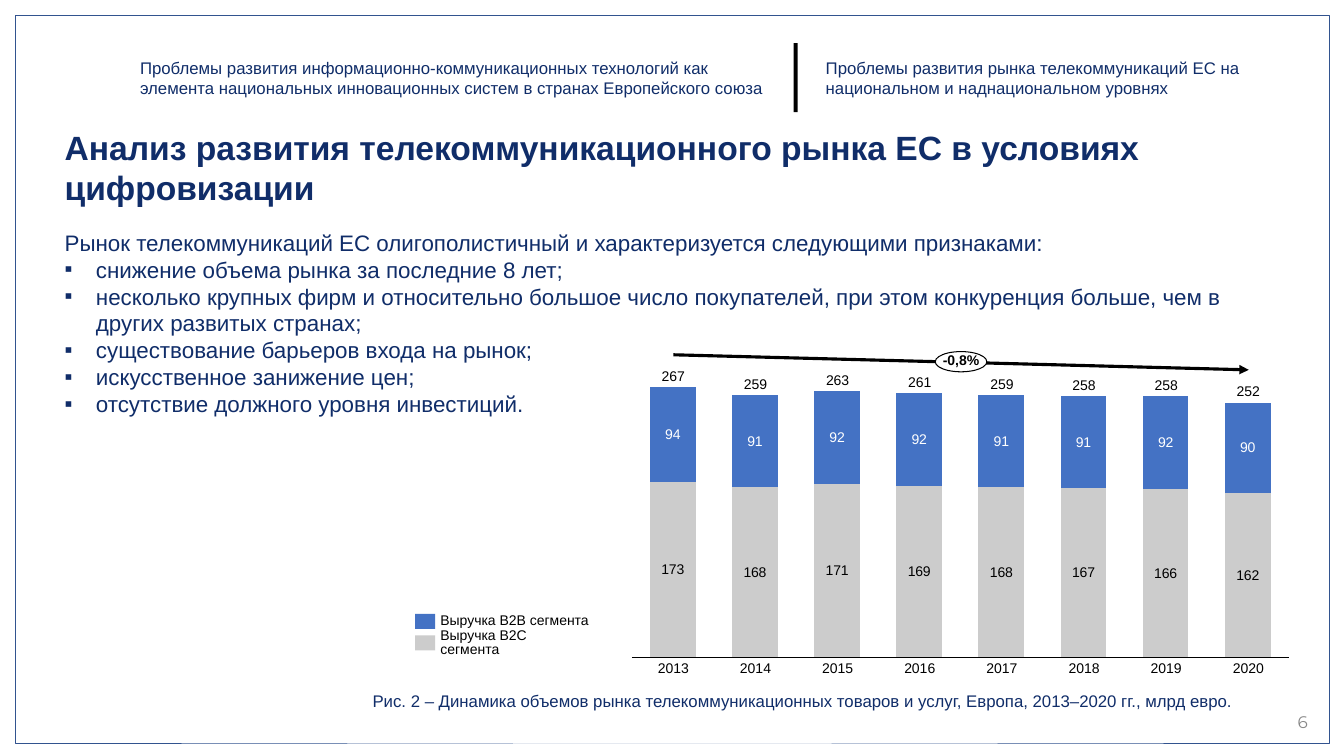
from lxml import etree
from pptx import Presentation
from pptx.chart.data import CategoryChartData
from pptx.dml.color import RGBColor
from pptx.enum.chart import XL_CHART_TYPE as ChartType
from pptx.enum.chart import XL_TICK_LABEL_POSITION as LabelPosition
from pptx.enum.chart import XL_TICK_MARK as TickMark
from pptx.enum.shapes import MSO_CONNECTOR as Connector
from pptx.enum.shapes import MSO_SHAPE as Shape
from pptx.enum.text import MSO_ANCHOR as Anchor
from pptx.enum.text import PP_ALIGN as Align
from pptx.oxml import parse_xml
from pptx.oxml.ns import nsdecls, qn
from pptx.util import Cm, Pt

NAVY = RGBColor(0x10, 0x2D, 0x69)
FRAME_BLUE = RGBColor(0x32, 0x53, 0x8F)
BAR_BLUE = RGBColor(0x44, 0x72, 0xC4)
BAR_GREY = RGBColor(0xCC, 0xCC, 0xCC)
PAGE_GREY = RGBColor(0x88, 0x88, 0x88)
BLACK = RGBColor(0, 0, 0)
WHITE = RGBColor(0xFF, 0xFF, 0xFF)

# Text formats
TITLE = {"size": Pt(24), "name": "Arial", "bold": True}
BODY = {"size": Pt(16), "name": "Arial"}
NOTE = {"size": Pt(12), "name": "Arial"}
LABEL = {"size": Pt(10), "name": "Arial"}
BADGE = {"size": Pt(10), "name": "Arial", "bold": True}
PAGE_NUMBER = {"size": Pt(12), "name": "Montserrat"}

# Chart data and geometry in centimetres
YEARS = range(2013, 2021)
B2C = [173, 168, 171, 169, 168, 167, 166, 162]
B2B = [94, 91, 92, 92, 91, 91, 92, 90]
TOTALS = [b2c + b2b for b2c, b2b in zip(B2C, B2B)]
PEAK = max(TOTALS)
FIRST_BAR, BAR_STEP = 16.97, 2.07
BASELINE, PLOT_HEIGHT = 16.56, 6.81

INTRO = "Рынок телекоммуникаций ЕС олигополистичный и характеризуется следующими признаками:"
FEATURES = [
    "снижение объема рынка за последние 8 лет;",
    "несколько крупных фирм и относительно большое число покупателей, "
    "при этом конкуренция больше, чем в других развитых странах;",
    "существование барьеров входа на рынок;",
    "искусственное занижение цен;",
    "отсутствие должного уровня инвестиций.",
]


def apply(target, values):
    for name, value in values.items():
        setattr(target, name, value)


def style_font(font, values, color):
    apply(font, values)
    font.color.rgb = color


def write(box, lines, values, color=NAVY, align=Align.LEFT, anchor=Anchor.TOP,
          inset=0.13, wrap=True, spacing=None):
    frame = box.text_frame
    apply(frame, {"word_wrap": wrap, "vertical_anchor": anchor,
                  "margin_left": Cm(inset), "margin_right": Cm(inset),
                  "margin_top": Cm(min(inset, 0.13)),
                  "margin_bottom": Cm(min(inset, 0.13))})
    for index, line in enumerate(lines):
        para = frame.add_paragraph() if index else frame.paragraphs[0]
        apply(para, {"alignment": align, "line_spacing": spacing})
        span = para.add_run()
        span.text = line
        style_font(span.font, values, color)
    return frame


def add_text(page, place, lines, values, **options):
    box = page.shapes.add_textbox(*map(Cm, place))
    return write(box, lines, values, **options)


def add_label(page, place, text, **options):
    add_text(page, place, [text], LABEL, color=BLACK, inset=0,
             wrap=False, spacing=0.85, **options)


def add_figure(page, kind, place, fill, line=None, width=0.75):
    figure = page.shapes.add_shape(kind, *map(Cm, place))
    figure.shadow.inherit = False
    figure.fill.solid()
    figure.fill.fore_color.rgb = fill
    if line is None:
        figure.line.fill.background()
    else:
        figure.line.color.rgb = line
        figure.line.width = Pt(width)
    return figure


def add_bullet(para):
    properties = para._p.get_or_add_pPr()
    properties.set("marL", str(Cm(0.79)))
    properties.set("indent", str(-Cm(0.79)))
    etree.SubElement(properties, qn("a:buFont")).set("typeface", "Arial")
    etree.SubElement(properties, qn("a:buChar")).set("char", "▪")


def add_arrow(page, start, end):
    arrow = page.shapes.add_connector(Connector.STRAIGHT, *map(Cm, start + end))
    arrow.line.color.rgb = BLACK
    arrow.line.width = Pt(2.25)
    etree.SubElement(arrow.line._get_or_add_ln(), qn("a:tailEnd")).set("type", "triangle")
    etree.SubElement(arrow._element.spPr, qn("a:effectLst"))


def set_plot_layout(chart, x, y, w, h):
    area = chart._chartSpace.chart.plotArea
    for old in area.findall(qn("c:layout")):
        area.remove(old)
    sizes = "".join(f'<c:{key} val="{value}"/>'
                    for key, value in {"x": x, "y": y, "w": w, "h": h}.items())
    area.insert(0, parse_xml(
        f'<c:layout {nsdecls("c")}><c:manualLayout><c:layoutTarget val="inner"/>'
        f'<c:xMode val="edge"/><c:yMode val="edge"/>{sizes}</c:manualLayout></c:layout>'))


def add_revenue_chart(page):
    data = CategoryChartData()
    data.categories = [str(number) for number in range(1, len(YEARS) + 1)]
    data.add_series("Series 1", B2C)
    data.add_series("Series 2", B2B)
    place = map(Cm, (15.7, 9.53, 17.02, 7.26))
    chart = page.shapes.add_chart(ChartType.COLUMN_STACKED, *place, data).chart
    apply(chart, {"has_legend": False, "has_title": False})
    style_font(chart.font, LABEL, BLACK)
    set_plot_layout(chart, 0.013, 0.032, 0.973, 0.937)
    apply(chart.value_axis, {"visible": False, "has_major_gridlines": False,
                             "minimum_scale": 0, "maximum_scale": PEAK})
    axis = chart.category_axis
    apply(axis, {"tick_label_position": LabelPosition.NONE,
                 "major_tick_mark": TickMark.NONE, "minor_tick_mark": TickMark.NONE})
    axis.format.line.color.rgb = BLACK
    axis.format.line.width = Pt(0.75)
    plot = chart.plots[0]
    apply(plot, {"gap_width": 80, "overlap": 100, "vary_by_categories": False})
    for series, fill, ink in zip(plot.series, (BAR_GREY, BAR_BLUE), (BLACK, WHITE)):
        series.format.fill.solid()
        series.format.fill.fore_color.rgb = fill
        series.data_labels.show_value = True
        style_font(series.data_labels.font, LABEL, ink)


def main():
    deck = Presentation()
    apply(deck, {"slide_width": Cm(33.87), "slide_height": Cm(19.05)})
    page = deck.slides.add_slide(deck.slide_layouts[6])

    # Frame and header
    add_figure(page, Shape.RECTANGLE, (0.38, 0.38, 33.12, 18.34), WHITE, FRAME_BLUE, 0.25)
    add_text(page, (3.4, 1.32, 16.28, 1.27),
             ["Проблемы развития информационно-коммуникационных технологий как элемента "
              "национальных инновационных систем в странах Европейского союза"], NOTE)
    add_text(page, (20.68, 1.32, 11.66, 1.27),
             ["Проблемы развития рынка телекоммуникаций ЕС на национальном "
              "и наднациональном уровнях"], NOTE)
    add_figure(page, Shape.RECTANGLE, (20, 1.09, 0.1, 1.74), BLACK)

    # Title and body
    add_text(page, (1.5, 3.07, 27.89, 2.31),
             ["Анализ развития телекоммуникационного рынка ЕС в условиях цифровизации"], TITLE)
    body = add_text(page, (1.5, 5.64, 30.84, 6.02), [INTRO, *FEATURES], BODY)
    for para in body.paragraphs[1:]:
        add_bullet(para)

    # Chart with totals and years
    add_revenue_chart(page)
    for index, (year, total) in enumerate(zip(YEARS, TOTALS)):
        left = FIRST_BAR + index * BAR_STEP - 0.4
        top = BASELINE - PLOT_HEIGHT * total / PEAK - 0.43
        add_label(page, (left, top, 0.8, 0.36), str(total),
                  align=Align.CENTER, anchor=Anchor.BOTTOM)
        add_label(page, (left, 16.69, 0.8, 0.36), str(year), align=Align.CENTER)

    # Trend arrow with its rate
    add_arrow(page, (16.97, 8.94), (31.47, 9.32))
    badge = add_figure(page, Shape.OVAL, (23.57, 8.86, 1.3, 0.51), WHITE, BLACK)
    write(badge, ["-0,8%"], BADGE, color=BLACK, align=Align.CENTER,
          anchor=Anchor.MIDDLE, inset=0, wrap=False, spacing=0.85)

    # Legend
    for row, (name, fill) in enumerate((("B2B", BAR_BLUE), ("B2C", BAR_GREY))):
        top = 15.47 + row * 0.54
        add_figure(page, Shape.RECTANGLE, (10.46, top, 0.51, 0.38), fill)
        add_label(page, (11.1, top + 0.01, 3.75, 0.36), f"Выручка {name} сегмента",
                  anchor=Anchor.MIDDLE)

    # Caption and page number
    add_text(page, (9.14, 17.27, 24.08, 0.76),
             ["Рис. 2 – Динамика объемов рынка телекоммуникационных товаров и услуг, "
              "Европа, 2013–2020 гг., млрд евро."], NOTE, inset=0.25)
    add_text(page, (32.33, 17.83, 0.76, 0.74), ["6"], PAGE_NUMBER, color=PAGE_GREY,
             align=Align.RIGHT, anchor=Anchor.MIDDLE, wrap=False)

    deck.save("out.pptx")


if __name__ == "__main__":
    main()
